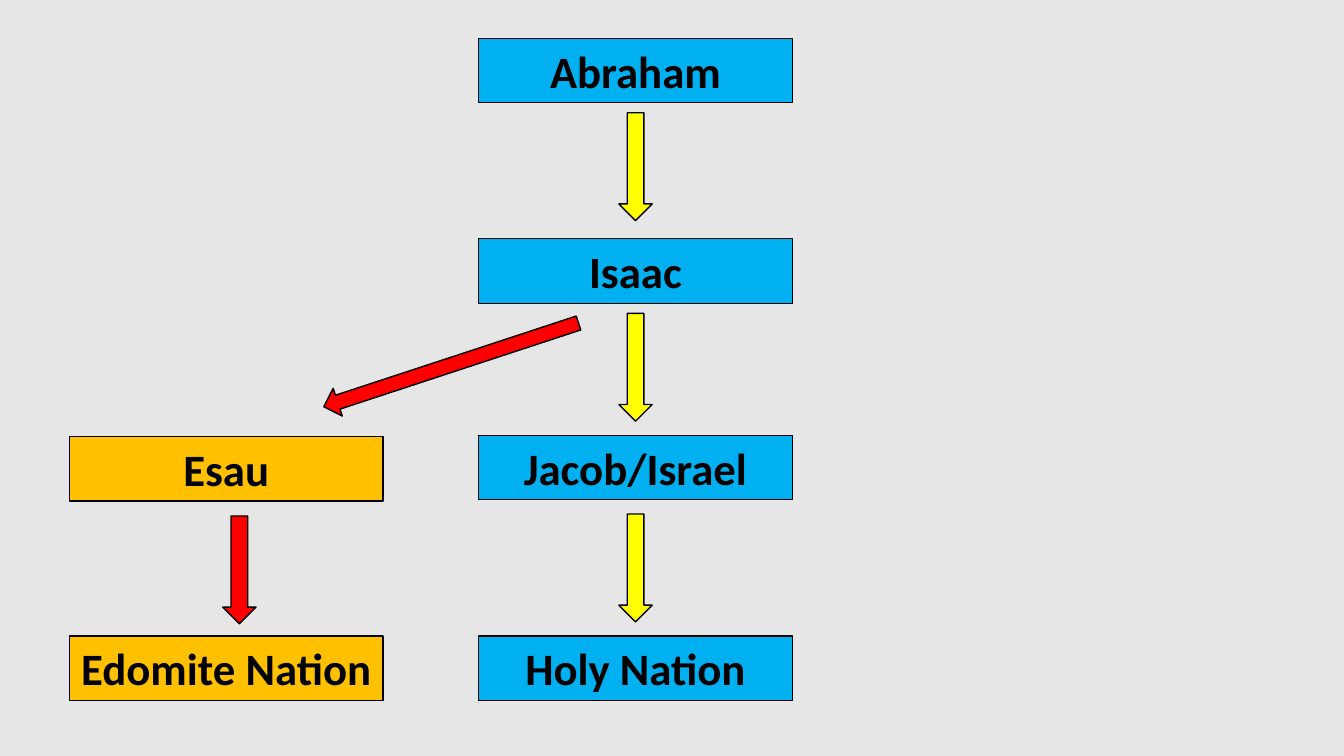
from dataclasses import dataclass

from pptx import Presentation
from pptx.dml.color import RGBColor
from pptx.enum.shapes import MSO_SHAPE as Preset
from pptx.enum.text import MSO_ANCHOR as Anchor, MSO_AUTO_SIZE as AutoSize, PP_ALIGN as Align
from pptx.shapes.autoshape import Shape
from pptx.slide import Slide
from pptx.util import Pt

BLACK, GREY = "000000", "E7E6E6"
BLUE, ORANGE, YELLOW, RED = "00B0F0", "FFC000", "FFFF00", "FF0000"

BOX_WIDTH, BOX_HEIGHT = 223.9, 46.1
ARROW_WIDTH, ARROW_HEIGHT = 23.8, 77
CHOSEN_LEFT, EDOM_LEFT = 342, 49.7
CHOSEN_ARROW_LEFT, EDOM_ARROW_LEFT = 442.1, 159.1
FIRST_ARROW_TOP, GENERATION_STEP = 80.6, 143.3

FRAME_FORMAT = {
    "word_wrap": True,
    "auto_size": AutoSize.SHAPE_TO_FIT_TEXT,
    "vertical_anchor": Anchor.TOP,
}
FONT_FORMAT = {"name": "Calibri", "size": Pt(32), "bold": True}


@dataclass(frozen=True)
class Person:
    name: str
    left: float
    top: float
    fill: str


@dataclass(frozen=True)
class Arrow:
    left: float
    top: float
    fill: str
    width: float = ARROW_WIDTH
    height: float = ARROW_HEIGHT
    rotation: float = 0


PEOPLE = [
    Person("Abraham", CHOSEN_LEFT, 27.4, BLUE),
    Person("Isaac", CHOSEN_LEFT, 170.6, BLUE),
    Person("Jacob/Israel", CHOSEN_LEFT, 311, BLUE),
    Person("Holy Nation", CHOSEN_LEFT, 454.3, BLUE),
    Person("Esau", EDOM_LEFT, 311.8, ORANGE),
    Person("Edomite Nation", EDOM_LEFT, 454.3, ORANGE),
]

ARROWS = [
    *(
        Arrow(CHOSEN_ARROW_LEFT, FIRST_ARROW_TOP + generation * GENERATION_STEP, YELLOW)
        for generation in range(3)
    ),
    Arrow(311.8, 164.9, RED, width=20.9, height=191.5, rotation=71.8),
    Arrow(EDOM_ARROW_LEFT, 368.6, RED),
]


def color(value: str) -> RGBColor:
    return RGBColor.from_string(value)


def apply_format(target: object, values: dict[str, object]) -> None:
    for name, value in values.items():
        setattr(target, name, value)


def style_shape(shape: Shape, fill: str, line_width: float) -> None:
    shape.shadow.inherit = False
    shape.fill.solid()
    shape.fill.fore_color.rgb = color(fill)
    shape.line.color.rgb = color(BLACK)
    shape.line.width = Pt(line_width)


def draw_person(slide: Slide, person: Person) -> None:
    shape = slide.shapes.add_shape(
        Preset.RECTANGLE, Pt(person.left), Pt(person.top), Pt(BOX_WIDTH), Pt(BOX_HEIGHT)
    )
    style_shape(shape, person.fill, 0.75)
    apply_format(shape.text_frame, FRAME_FORMAT)
    paragraph = shape.text_frame.paragraphs[0]
    paragraph.alignment = Align.CENTER
    run = paragraph.add_run()
    run.text = person.name
    apply_format(run.font, FONT_FORMAT)
    run.font.color.rgb = color(BLACK)


def draw_arrow(slide: Slide, arrow: Arrow) -> None:
    shape = slide.shapes.add_shape(
        Preset.DOWN_ARROW, Pt(arrow.left), Pt(arrow.top), Pt(arrow.width), Pt(arrow.height)
    )
    style_shape(shape, arrow.fill, 1)
    shape.rotation = arrow.rotation


def main() -> None:
    presentation = Presentation()
    presentation.slide_width, presentation.slide_height = Pt(960), Pt(540)
    slide = presentation.slides.add_slide(presentation.slide_layouts[6])
    slide.background.fill.solid()
    slide.background.fill.fore_color.rgb = color(GREY)
    for person in PEOPLE:
        draw_person(slide, person)
    for arrow in ARROWS:
        draw_arrow(slide, arrow)
    presentation.save("out.pptx")


if __name__ == "__main__":
    main()
